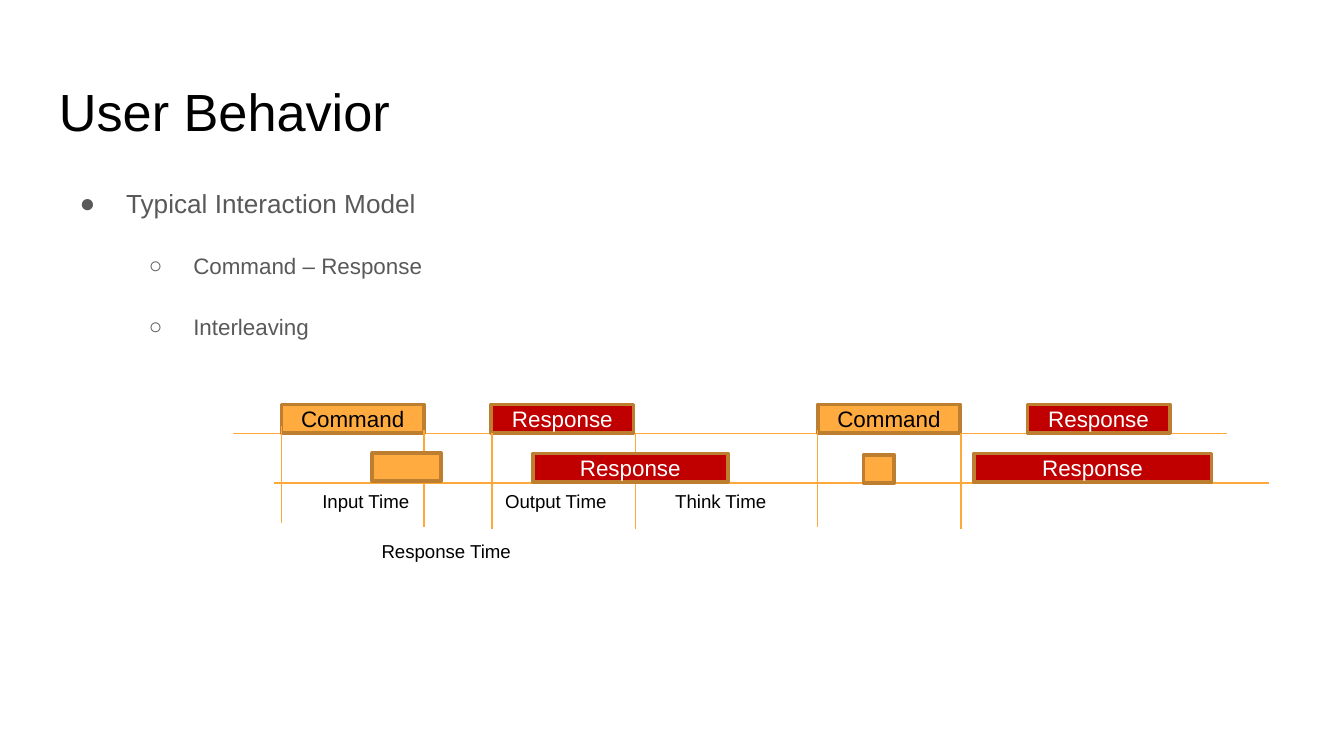
import pptx
import pptx.dml.color
import pptx.enum.shapes
import pptx.enum.text
import pptx.oxml.ns
import pptx.util
from lxml import etree

PX = 4572  # EMU: 200 px to the inch
BLACK, WHITE, GREY = "000000", "FFFFFF", "595959"
AMBER, RED, EDGE, RULE = "FFAB40", "C00000", "BD7F2F", "FEA83A"


def color(code):
    return pptx.dml.color.RGBColor.from_string(code)


def emu(*sizes):
    return [pptx.util.Emu(size * PX) for size in sizes]


def child(parent, tag, **attrs):
    return etree.SubElement(parent, pptx.oxml.ns.qn(tag), **attrs)


def bullet(para, mark, left, hang, tint):
    props = para._p.get_or_add_pPr()
    props.set("marL", str(left * PX))
    props.set("indent", str(-hang * PX))
    child(child(props, "a:buClr"), "a:srgbClr", val=tint)
    child(props, "a:buFont", typeface="Arial")
    child(props, "a:buChar", char=mark)


def write(para, text, size=12, tint=BLACK, align=None, gap=0, lead=None, mark=None, left=0, hang=0):
    """Fill one paragraph; gap is space before, lead is line spacing."""
    if align is not None:
        para.alignment = align
    if lead:
        para.line_spacing = lead
    if gap:
        para.space_before = pptx.util.Pt(gap)
    if mark:
        bullet(para, mark, left, hang, tint)
    run = para.add_run()
    run.text = text
    run.font.name = "Arial"
    run.font.size = pptx.util.Pt(size)
    run.font.color.rgb = color(tint)


class Board:
    """Holds the current slide and draws each kind of element on it."""

    def __init__(self, slide):
        self.shapes = slide.shapes

    def text(self, x, y, w, h, pad=20):
        frame = self.shapes.add_textbox(*emu(x, y, w, h)).text_frame
        frame.word_wrap = True
        frame.margin_left = frame.margin_right = emu(20)[0]
        frame.margin_top = frame.margin_bottom = emu(pad)[0]
        return frame

    def label(self, x, y, w, text):
        frame = self.text(x, y, w, 54, pad=10)
        frame.word_wrap = False
        frame.auto_size = pptx.enum.text.MSO_AUTO_SIZE.SHAPE_TO_FIT_TEXT
        write(frame.paragraphs[0], text, size=10)

    def line(self, x1, y1, x2, y2):
        kind = pptx.enum.shapes.MSO_CONNECTOR.STRAIGHT
        rule = self.shapes.add_connector(kind, *emu(x1, y1, x2, y2))
        rule.line.color.rgb = color(RULE)
        rule.line.width = pptx.util.Pt(0.75)
        child(rule._element.spPr, "a:effectLst")

    def bar(self, x, y, w, fill, text="", tint=BLACK):
        kind = pptx.enum.shapes.MSO_SHAPE.RECTANGLE
        box = self.shapes.add_shape(kind, *emu(x, y, w, 42))
        box.shadow.inherit = False
        box.fill.solid()
        box.fill.fore_color.rgb = color(fill)
        box.line.color.rgb = color(EDGE)
        box.line.width = pptx.util.Pt(2)
        if text:
            box.text_frame.vertical_anchor = pptx.enum.text.MSO_ANCHOR.MIDDLE
            write(box.text_frame.paragraphs[0], text, tint=tint,
                  align=pptx.enum.text.PP_ALIGN.CENTER)

    def reply(self, x, y, w):
        self.bar(x, y, w, RED, "Response", WHITE)


def main():
    deck = pptx.Presentation()
    deck.slide_width, deck.slide_height = emu(2000, 1125)
    board = Board(deck.slides.add_slide(deck.slide_layouts[6]))

    title = board.text(68, 98, 1864, 126)
    write(title.paragraphs[0], "User Behavior", size=28)

    body = board.text(68, 252, 874, 748)
    write(body.paragraphs[0], "Typical Interaction Model", size=14, tint=GREY,
          lead=1.15, mark="●", left=100, hang=69)
    for text in ("Command – Response", "Interleaving"):
        para = body.add_paragraph()
        para.level = 1
        write(para, text, tint=GREY, lead=1.15, gap=16, mark="○", left=200, hang=66)

    # Upper track: two command and response rounds
    board.line(346, 645, 1826, 645)
    for x in (419, 1217):
        board.bar(x, 602, 212, AMBER, "Command")
        board.reply(x + 312, 602, 212)

    for x, top in ((419, 634), (631, 640), (732, 644), (946, 644), (1217, 640), (1430, 644)):
        board.line(x, top, x, top + 144)

    for x, y, w, text in (
        (548, 793, 236, "Response Time"),
        (985, 719, 178, "Think Time"),
        (460, 719, 172, "Input Time"),
        (732, 719, 194, "Output Time"),
    ):
        board.label(x, y, w, text)

    # Lower track: the interleaved work
    board.line(408, 719, 1888, 719)
    board.bar(554, 674, 102, AMBER)
    board.reply(793, 675, 290)
    board.bar(1285, 677, 46, AMBER)
    board.reply(1449, 675, 354)

    deck.save("out.pptx")


if __name__ == "__main__":
    main()
